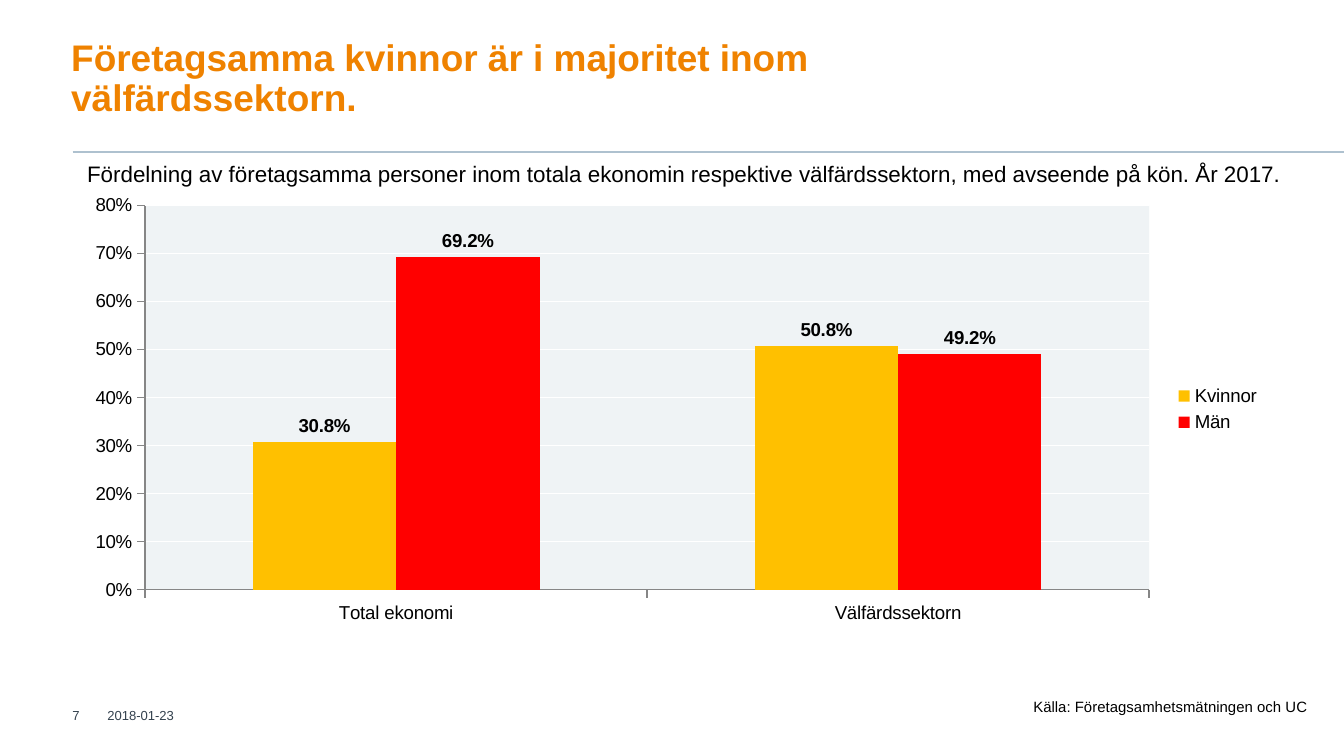
from lxml import etree
from pptx import Presentation
from pptx import util as u
from pptx.chart.data import CategoryChartData
from pptx.dml.color import RGBColor
from pptx.enum import chart as ch, shapes, text
from pptx.oxml import parse_xml
from pptx.oxml.ns import nsdecls, qn

PX = 9144  # EMU per px, 100 px to the inch
ORANGE = RGBColor(0xEF, 0x82, 0x00)
SLATE = RGBColor(0x33, 0x41, 0x4E)
RULE = RGBColor(0xAE, 0xC1, 0xCF)
AXIS = RGBColor(0x86, 0x86, 0x86)
BLACK = RGBColor(0, 0, 0)
WHITE = RGBColor(255, 255, 255)
YELLOW = RGBColor(0xFF, 0xC0, 0x00)
RED = RGBColor(0xFF, 0, 0)
PLOT_FILL = RGBColor(0xEF, 0xF3, 0xF5)


def px(*lengths):
    return [u.Emu(n * PX) for n in lengths]


def write(shape, words, size, color, frame_format, bold=False):
    frame = shape.text_frame
    for name, value in frame_format.items():
        setattr(frame, name, value)
    frame.text = words
    font = frame.paragraphs[0].runs[0].font
    font.name, font.size, font.bold = "Arial", u.Pt(size), bold
    font.color.rgb = color


# Slide in 16:9
prs = Presentation()
prs.slide_width = u.Inches(10)
prs.slide_height = prs.slide_width * 9 // 16
slide = prs.slides.add_slide(prs.slide_layouts[5])

# Title and the rule below it
title = slide.shapes.title
title.left, title.top, title.width, title.height = px(53, 27, 716, 67)
write(title, "Företagsamma kvinnor är i majoritet inom välfärdssektorn.", 19.8, ORANGE,
      {"margin_left": 0, "margin_top": 0, "margin_right": px(10)[0], "margin_bottom": px(5)[0],
       "vertical_anchor": text.MSO_ANCHOR.BOTTOM, "word_wrap": True,
       "auto_size": text.MSO_AUTO_SIZE.NONE}, bold=True)
title.text_frame.paragraphs[0].alignment = text.PP_ALIGN.LEFT
title.text_frame.paragraphs[0].line_spacing = 0.9

rule = slide.shapes.add_connector(shapes.MSO_CONNECTOR.STRAIGHT, *px(54, 113, 1000, 113))
rule.line.color.rgb = RULE
rule.line.width = u.Pt(1)
etree.SubElement(rule._element.spPr, qn("a:effectLst"))

# Footer, chart heading and source note
footer = {"vertical_anchor": text.MSO_ANCHOR.MIDDLE, "word_wrap": True}
date = {**footer, "margin_left": 0, "margin_right": 0}
one_line = {"word_wrap": False, "auto_size": text.MSO_AUTO_SIZE.SHAPE_TO_FIT_TEXT}
for box, words, size, color, frame_format in [
    ((80, 526, 60, 13), "2018-01-23", 7, SLATE, date),
    ((44, 526, 35, 13), "7", 7, SLATE, footer),
    ((55, 114, 916, 30), "Fördelning av företagsamma personer inom totala ekonomin respektive "
     "välfärdssektorn, med avseende på kön. År 2017.", 12, BLACK, one_line),
    ((759, 514, 227, 24), "Källa: Företagsamhetsmätningen och UC", 8, BLACK, one_line),
]:
    write(slide.shapes.add_textbox(*px(*box)), words, size, color, frame_format)

# Chart of shares by gender
CHART_WIDTH, CHART_HEIGHT = 895, 333
shares = CategoryChartData(number_format="0.0%")
shares.categories = ["Total ekonomi", "Välfärdssektorn"]
shares.add_series("Kvinnor", [0.308, 0.508])
shares.add_series("Män", [0.692, 0.492])
chart = slide.shapes.add_chart(ch.XL_CHART_TYPE.COLUMN_CLUSTERED,
                               *px(53, 138, CHART_WIDTH, CHART_HEIGHT), shares).chart
chart.has_title = False
chart.font.name, chart.font.size = "Arial", u.Pt(10)
chart.font.color.rgb = BLACK
chart.has_legend = True
chart.legend.position = ch.XL_LEGEND_POSITION.RIGHT
chart.legend.include_in_layout = False

columns = chart.plots[0]
columns.gap_width, columns.overlap, columns.vary_by_categories = 150, 0, False
for gender, color in zip(columns.series, (YELLOW, RED)):
    gender.format.fill.solid()
    gender.format.fill.fore_color.rgb = color
    labels = gender.data_labels
    for name, value in {"show_value": True, "number_format": "0.0%",
                        "number_format_is_linked": False,
                        "position": ch.XL_LABEL_POSITION.OUTSIDE_END}.items():
        setattr(labels, name, value)
    labels.font.name, labels.font.size, labels.font.bold = "Arial", u.Pt(10), True
    labels.font.color.rgb = BLACK

# Axes and gridlines
percent = chart.value_axis
for axis in (chart.category_axis, percent):
    axis.major_tick_mark = ch.XL_TICK_MARK.OUTSIDE
    axis.minor_tick_mark = ch.XL_TICK_MARK.NONE
    axis.format.line.color.rgb = AXIS
    axis.format.line.width = u.Pt(0.75)
percent.minimum_scale, percent.maximum_scale, percent.major_unit = 0, 0.8, 0.1
percent.tick_labels.number_format = "0%"
percent.tick_labels.number_format_is_linked = False
percent.has_major_gridlines = True
percent.major_gridlines.format.line.color.rgb = WHITE
percent.major_gridlines.format.line.width = u.Pt(0.75)

# Plot area: fixed inner frame and pale fill
plot_area = chart._chartSpace.chart.plotArea
for old in plot_area.findall(qn("c:layout")):
    plot_area.remove(old)
frame = "".join(f'<c:{tag} val="{value}"/>' for tag, value in [
    ("layoutTarget", "inner"), ("xMode", "edge"), ("yMode", "edge"),
    ("x", 55 / CHART_WIDTH), ("y", 15 / CHART_HEIGHT),
    ("w", 747 / CHART_WIDTH), ("h", 286 / CHART_HEIGHT)])
plot_area.insert(0, parse_xml(
    f'<c:layout {nsdecls("c")}><c:manualLayout>{frame}</c:manualLayout></c:layout>'))
plot_area.append(parse_xml(
    f'<c:spPr {nsdecls("c", "a")}><a:solidFill><a:srgbClr val="{PLOT_FILL}"/></a:solidFill>'
    '<a:ln><a:noFill/></a:ln></c:spPr>'))

prs.save("out.pptx")
